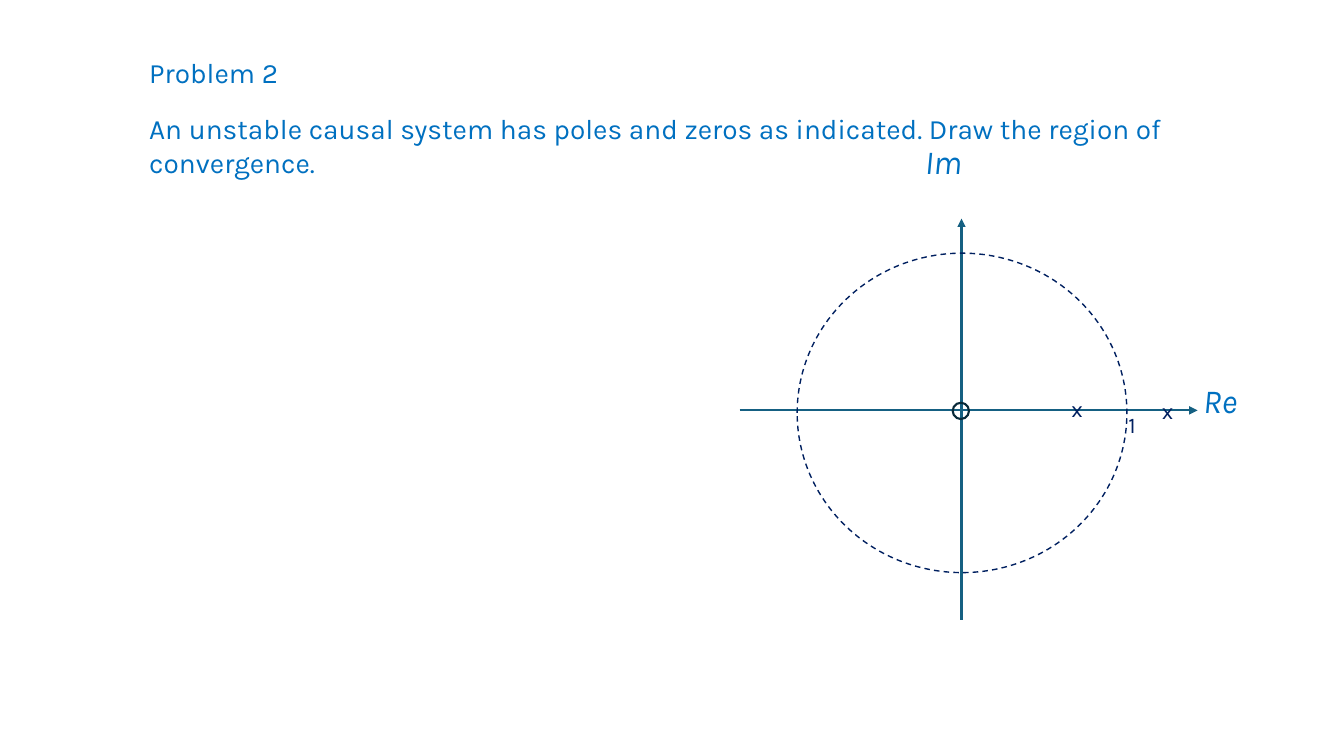
"""Build a slide with a pole-zero plot of an unstable causal system."""
from typing import NamedTuple, Optional

from lxml.etree import SubElement
from pptx import Presentation
from pptx.dml.color import RGBColor
from pptx.enum.dml import MSO_LINE
from pptx.enum.shapes import MSO_CONNECTOR, MSO_SHAPE
from pptx.oxml.ns import qn
from pptx.slide import Slide
from pptx.util import Cm, Pt

COLORS = {"text": "0070C0", "mark": "002060", "axis": "156082", "zero": "092A39"}
FONT = "Karla"
ORIGIN_X, ORIGIN_Y = 24.23, 10.34


class Label(NamedTuple):
    text: str
    left: float
    top: float
    width: float
    height: float
    size: int
    color: str = "text"
    italic: bool = False


class Axis(NamedTuple):
    x1: float
    y1: float
    x2: float
    y2: float


class Ring(NamedTuple):
    left: float
    top: float
    width: float
    height: float
    color: str
    weight: float
    dash: Optional[MSO_LINE] = None


AXES = [
    Axis(ORIGIN_X, 15.62, ORIGIN_X, 5.51),
    Axis(18.64, ORIGIN_Y, 30.18, ORIGIN_Y),
]
RINGS = [
    Ring(20.09, 6.38, 8.31, 8.05, "mark", 1, MSO_LINE.DASH),
    Ring(24.01, 10.15, 0.41, 0.41, "zero", 1.5),
]
LABELS = [
    Label("Problem 2", 3.51, 1.27, 5.23, 1.12, 20),
    Label("An unstable causal system has poles and zeros as indicated. "
          "Draw the region of convergence.", 3.51, 2.69, 28.52, 1.96, 20),
    Label("Re", 30.07, 9.45, 2.54, 2.03, 24, italic=True),
    Label("Im", 23.06, 3.43, 2.54, 2.03, 24, italic=True),
    Label("1", 28.19, 10.24, 1.98, 1.5, 16, "mark"),
    Label("x", 26.75, 9.83, 1.12, 1.5, 16, "mark"),
    Label("x", 29.03, 9.88, 1.12, 1.5, 16, "mark"),
]


def rgb(name: str) -> RGBColor:
    return RGBColor.from_string(COLORS[name])


def add_axis(slide: Slide, axis: Axis) -> None:
    cxn = slide.shapes.add_connector(MSO_CONNECTOR.STRAIGHT, *map(Cm, axis))
    cxn.line.color.rgb = rgb("axis")
    cxn.line.width = Pt(1.5)
    SubElement(cxn.line._get_or_add_ln(), qn("a:tailEnd"), type="triangle")
    SubElement(cxn._element.spPr, qn("a:effectLst"))


def add_ring(slide: Slide, ring: Ring) -> None:
    sp = slide.shapes.add_shape(MSO_SHAPE.OVAL, *map(Cm, ring[:4]))
    sp.shadow.inherit = False
    sp.fill.background()
    sp.line.color.rgb = rgb(ring.color)
    sp.line.width = Pt(ring.weight)
    if ring.dash is not None:
        sp.line.dash_style = ring.dash


def add_label(slide: Slide, label: Label) -> None:
    tf = slide.shapes.add_textbox(*map(Cm, label[1:5])).text_frame
    tf.word_wrap = True
    r = tf.paragraphs[0].add_run()
    r.text = label.text
    r.font.name = FONT
    r.font.size = Pt(label.size)
    r.font.italic = label.italic
    r.font.color.rgb = rgb(label.color)


def main() -> None:
    prs = Presentation()
    prs.slide_width, prs.slide_height = Cm(33.87), Cm(19.05)
    slide = prs.slides.add_slide(prs.slide_layouts[6])
    for axis in AXES:
        add_axis(slide, axis)
    for ring in RINGS:
        add_ring(slide, ring)
    for label in LABELS:
        add_label(slide, label)
    prs.save("out.pptx")


if __name__ == "__main__":
    main()
